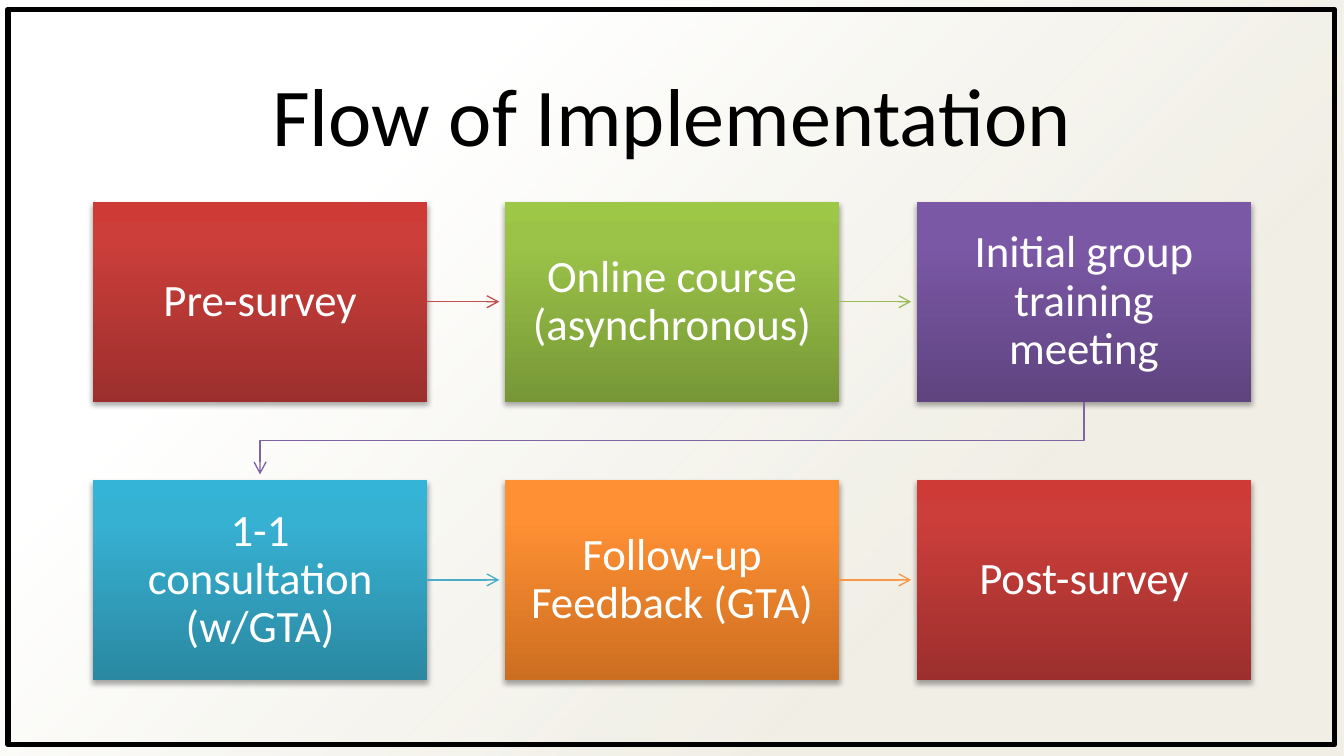
from lxml import etree
from pptx import Presentation
from pptx.dml.color import RGBColor
from pptx.enum import shapes, text
from pptx.oxml import parse_xml
from pptx.oxml.ns import nsdecls, qn
from pptx.util import Inches, Pt

BLACK = RGBColor(0, 0, 0)
WHITE = RGBColor(255, 255, 255)
RED = RGBColor(0xC0, 0x50, 0x4D)
GREEN = RGBColor(0x9B, 0xBB, 0x59)
PURPLE = RGBColor(0x80, 0x64, 0xA2)
TEAL = RGBColor(0x4B, 0xAC, 0xC6)
ORANGE = RGBColor(0xF7, 0x96, 0x46)

# Box shades from bottom to top, by the colour of the outgoing arrow
SHADES = {
    RED: ("9C2F2D", "CB3E3A", "CE3B37"),
    GREEN: ("779737", "9BC348", "9DC746"),
    PURPLE: ("5F4480", "7B58A6", "7C57A8"),
    TEAL: ("2A88A2", "37B1D2", "34B4D6"),
    ORANGE: ("CC6E20", "FF9034", "FF9136"),
}
TITLE = "Flow of Implementation"
STEPS = [
    ("Pre-survey", RED),
    ("Online course (asynchronous)", GREEN),
    ("Initial group training meeting", PURPLE),
    ("1-1 consultation (w/GTA)", TEAL),
    ("Follow-up Feedback (GTA)", ORANGE),
    ("Post-survey", RED),
]

WIDE = 10
HIGH = WIDE * 9 / 16
COLS = 3
LEFT, TOP = 0.69, 1.5
BOX_W, BOX_H = 2.49, 1.49
STEP_X = (WIDE - 2 * LEFT - BOX_W) / (COLS - 1)
STEP_Y = 2.07
GAP = 0.04  # space between an arrow tip and the next box

prs = Presentation()
prs.slide_width, prs.slide_height = Inches(WIDE), Inches(HIGH)
slide = prs.slides.add_slide(prs.slide_layouts[6])


def add_rect(x, y, w, h):
    rect = slide.shapes.add_shape(
        shapes.MSO_SHAPE.RECTANGLE, Inches(x), Inches(y), Inches(w), Inches(h))
    rect.shadow.inherit = False
    rect.line.fill.background()
    return rect


def set_grad(shape, stops, way):
    """Fill with (percent, hex, alpha percent) stops."""
    shape.fill.gradient()
    old = shape._element.spPr.find(qn("a:gradFill"))
    marks = "".join(
        f'<a:gs pos="{pos * 1000}"><a:srgbClr val="{tone}">'
        f'<a:alpha val="{alpha * 1000}"/></a:srgbClr></a:gs>'
        for pos, tone, alpha in stops)
    old.getparent().replace(old, parse_xml(
        f'<a:gradFill {nsdecls("a")} rotWithShape="1">'
        f"<a:gsLst>{marks}</a:gsLst>{way}</a:gradFill>"))


def add_shadow(shape):
    effects = shape._element.spPr.find(qn("a:effectLst"))
    effects.append(parse_xml(
        f'<a:outerShdw {nsdecls("a")} blurRad="{Pt(3.1)}" dist="{Pt(1.8)}" '
        'dir="5400000" rotWithShape="0"><a:srgbClr val="000000">'
        '<a:alpha val="35000"/></a:srgbClr></a:outerShdw>'))


def set_text(shape, words, size, color, pad_x, pad_y):
    frame = shape.text_frame
    frame.word_wrap = True
    frame.vertical_anchor = text.MSO_ANCHOR.MIDDLE
    frame.margin_left = frame.margin_right = Inches(pad_x)
    frame.margin_top = frame.margin_bottom = Inches(pad_y)
    para = frame.paragraphs[0]
    para.text = words
    para.alignment = text.PP_ALIGN.CENTER
    para.font.name, para.font.size = "Calibri", Pt(size)
    para.font.color.rgb = color
    return para


def style_arrow(arrow, color):
    arrow.line.color.rgb = color
    arrow.line.width = Pt(0.75)
    etree.SubElement(arrow.line._get_or_add_ln(), qn("a:tailEnd"), type="arrow")
    props = arrow._element.spPr
    if props.find(qn("a:effectLst")) is None:
        etree.SubElement(props, qn("a:effectLst"))


# Backdrop
back = add_rect(0, 0, WIDE, HIGH)
set_grad(back, [(28, "EEECE1", 84), (74, "FFFFFF", 100)],
         '<a:path path="circle"><a:fillToRect l="100000" t="100000"/></a:path>')

# Title
title = slide.shapes.add_textbox(
    Inches(LEFT), Inches(0.3), Inches(WIDE - 2 * LEFT), Inches(1.09))
set_text(title, TITLE, 44, BLACK, 0.07, 0.04)

# Steps, each with an arrow to the next
for i, (words, color) in enumerate(STEPS):
    row, col = divmod(i, COLS)
    x, y = LEFT + col * STEP_X, TOP + row * STEP_Y
    box = add_rect(x, y, BOX_W, BOX_H)
    set_grad(box, [(pos, tone, 100) for pos, tone in zip((0, 80, 100), SHADES[color])],
             '<a:lin ang="16200000" scaled="0"/>')
    add_shadow(box)
    set_text(box, words, 24, WHITE, 0.19, 0.19).line_spacing = 0.9

    if i == len(STEPS) - 1:
        continue
    if col < COLS - 1:
        mid = Inches(y + BOX_H / 2)
        arrow = slide.shapes.add_connector(
            shapes.MSO_CONNECTOR.STRAIGHT, Inches(x + BOX_W), mid,
            Inches(x + STEP_X - GAP), mid)
    else:
        start, end = x + BOX_W / 2, LEFT + BOX_W / 2
        base, tip = y + BOX_H, y + STEP_Y - GAP
        bend = (y + BOX_H + y + STEP_Y) / 2
        path = slide.shapes.build_freeform(Inches(start), Inches(base))
        path.add_line_segments(
            [(Inches(px), Inches(py))
             for px, py in ((start, bend), (end, bend), (end, tip))], close=False)
        arrow = path.convert_to_shape()
        arrow.shadow.inherit = False
        arrow.fill.background()
    style_arrow(arrow, color)

# Frame
frame = add_rect(0.06, 0.07, 9.87, 5.47)
frame.fill.background()
frame.line.color.rgb = BLACK
frame.line.width = Pt(3)

prs.save("out.pptx")
